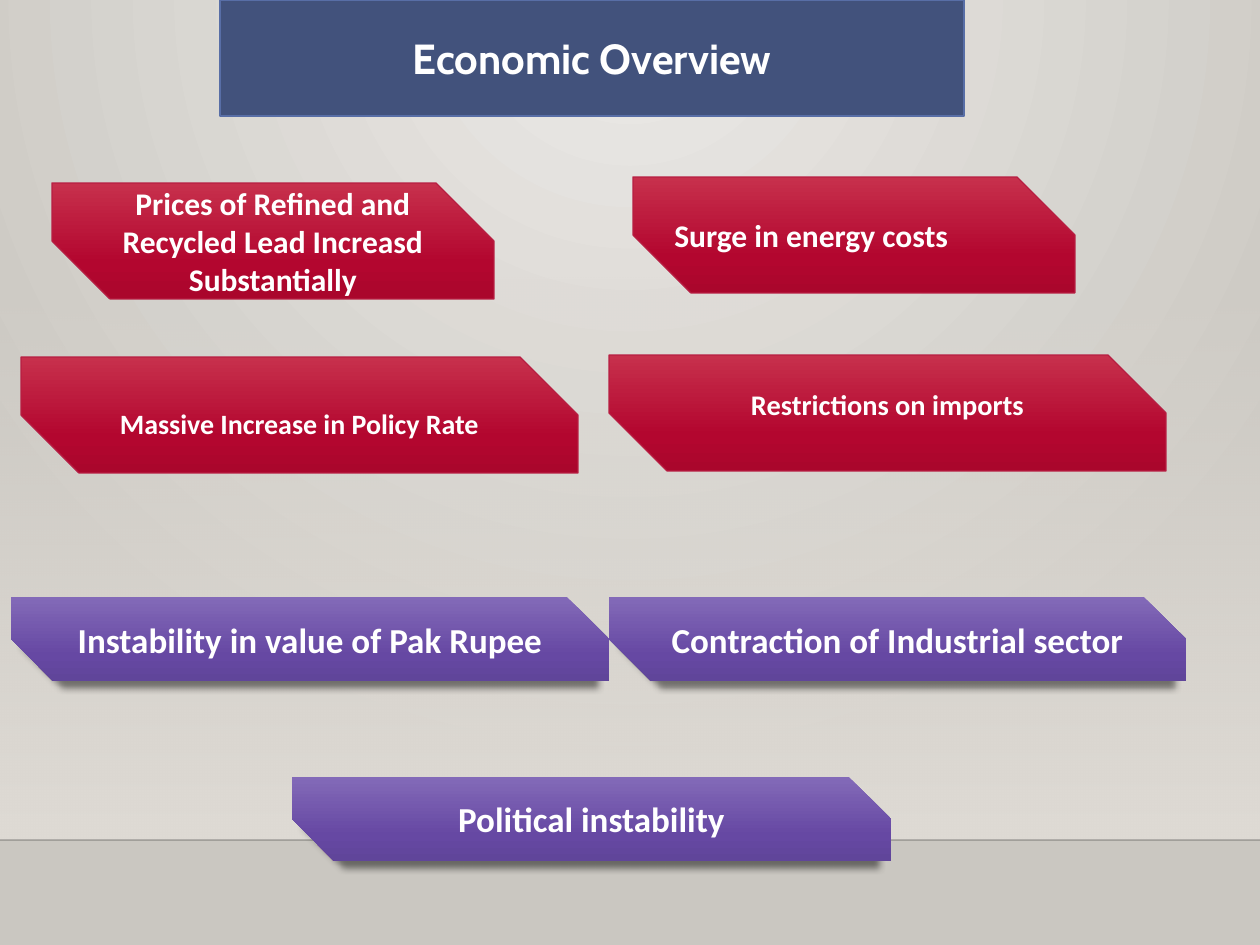
"""Builds the Economic Overview slide: a title bar and seven snipped banners."""
from dataclasses import dataclass

from lxml.etree import SubElement
from pptx import Presentation
from pptx.dml.color import RGBColor
from pptx.enum.shapes import MSO_CONNECTOR, MSO_SHAPE
from pptx.enum.text import MSO_ANCHOR, PP_ALIGN
from pptx.oxml.ns import qn
from pptx.util import Emu, Pt


@dataclass(frozen=True)
class Theme:
    white: str = "FFFFFF"
    title: str = "42527C"
    title_line: str = "586EA6"
    red_line: str = "B71E42"
    floor_line: str = "000001"
    shadow: str = "000000"
    backdrop: tuple = ((0, "ECEAE7", 100), (100, "CAC7C1", 100))
    wall: tuple = ((0, "DFDBD5", 0), (100, "DFDBD5", 100))
    red: tuple = ((0, "C7304C", 100), (69, "B3062F", 100), (100, "AA062C", 100))
    purple: tuple = ((0, "836AB8", 100), (69, "6648A3", 100), (100, "60459A", 100))
    heading_font: str = "Cabin"
    body_font: str = "Calibri"
    title_size: float = 24
    purple_size: float = 20


T = Theme()
W, H = 1260, 945
FLOOR = 840
CENTER, LEFT = PP_ALIGN.CENTER, PP_ALIGN.LEFT

TITLE = ("Economic Overview", (220, 0, 744, 116))
RED_SIZE, PURPLE_HEIGHT = 116, 84
RED_BANNERS = [
    ("Prices of Refined and Recycled Lead Increasd Substantially", 52, 183, 442, 18, CENTER, 0),
    ("Massive Increase in Policy Rate", 21, 357, 557, 16, CENTER, 8),
    ("Restrictions on imports", 609, 355, 557, 16.2, CENTER, -9),
    ("Surge in energy costs", 633, 177, 442, 18, LEFT, 0),
]
PURPLE_BANNERS = [
    ("Instability in value of Pak Rupee", 11, 597, 598),
    ("Contraction of Industrial sector", 609, 597, 577),
    ("Political instability", 292, 777, 599),
]


def px(n):
    return Emu(round(n * 914400 / 126))


def rgb(value):
    return RGBColor.from_string(value)


def add(parent, tag, **attrs):
    return SubElement(parent, qn(tag), {k: str(v) for k, v in attrs.items()})


def add_color(parent, value, alpha):
    clr = add(parent, "a:srgbClr", val=value)
    if alpha < 100:
        add(clr, "a:alpha", val=alpha * 1000)


def set_gradient(fill, owner, stops, circle=False):
    fill.gradient()
    grad = owner.find(".//" + qn("a:gradFill"))
    for child in list(grad):
        grad.remove(child)
    gs_list = add(grad, "a:gsLst")
    for pos, value, alpha in stops:
        add_color(add(gs_list, "a:gs", pos=pos * 1000), value, alpha)
    if circle:
        focus = add(grad, "a:path", path="circle")
        add(focus, "a:fillToRect", l=43000, t=0, r=43000, b=100000)
    else:
        add(grad, "a:lin", ang=5400000, scaled=0)


def add_box(s, kind, box, line=None):
    sp = s.shapes.add_shape(kind, *map(px, box))
    sp.shadow.inherit = False
    if line:
        sp.line.color.rgb = rgb(line)
        sp.line.width = Pt(0.75)
    else:
        sp.line.fill.background()
    return sp


def set_text(sp, text, font, size, align=CENTER, shift=0):
    tf = sp.text_frame
    tf.word_wrap = True
    tf.vertical_anchor = MSO_ANCHOR.MIDDLE
    tf.margin_top = px(6 + 2 * max(shift, 0))
    tf.margin_bottom = px(6 + 2 * max(-shift, 0))
    p = tf.paragraphs[0]
    p.alignment = align
    r = p.add_run()
    r.text = text
    r.font.name = font
    r.font.size = Pt(size)
    r.font.bold = True
    r.font.color.rgb = rgb(T.white)


def add_banner(s, box, stops, line=None):
    sp = add_box(s, MSO_SHAPE.SNIP_2_DIAG_RECTANGLE, box, line)
    sp.adjustments[0], sp.adjustments[1] = 0, 0.5
    set_gradient(sp.fill, sp.element.spPr, stops)
    return sp


def add_shadow(sp):
    effects = sp.element.spPr.find(qn("a:effectLst"))
    outer = add(effects, "a:outerShdw", blurRad=Pt(4), dist=Pt(4), dir=5400000,
                sx=96000, sy=96000, rotWithShape=0)
    add_color(outer, T.shadow, 48)


def add_backdrop(s):
    set_gradient(s.background.fill, s.element, T.backdrop, circle=True)
    wall = add_box(s, MSO_SHAPE.RECTANGLE, (0, 277, W, FLOOR - 277))
    set_gradient(wall.fill, wall.element.spPr, T.wall)
    edge = s.shapes.add_connector(MSO_CONNECTOR.STRAIGHT, 0, px(FLOOR), px(W), px(FLOOR))
    edge.line.width = Pt(1)
    edge.line.color.rgb = rgb(T.floor_line)
    add(edge.element.spPr.find(".//" + qn("a:srgbClr")), "a:alpha", val=20000)
    add(edge.element.spPr, "a:effectLst")


def main():
    prs = Presentation()
    prs.slide_width, prs.slide_height = px(W), px(H)
    s = prs.slides.add_slide(prs.slide_layouts[6])
    add_backdrop(s)

    text, box = TITLE
    title = add_box(s, MSO_SHAPE.RECTANGLE, box, T.title_line)
    title.fill.solid()
    title.fill.fore_color.rgb = rgb(T.title)
    set_text(title, text, T.heading_font, T.title_size)

    for text, x, y, w, size, align, shift in RED_BANNERS:
        sp = add_banner(s, (x, y, w, RED_SIZE), T.red, T.red_line)
        set_text(sp, text, T.body_font, size, align, shift)

    for text, x, y, w in PURPLE_BANNERS:
        sp = add_banner(s, (x, y, w, PURPLE_HEIGHT), T.purple)
        add_shadow(sp)
        set_text(sp, text, T.body_font, T.purple_size)

    prs.save("out.pptx")


if __name__ == "__main__":
    main()
